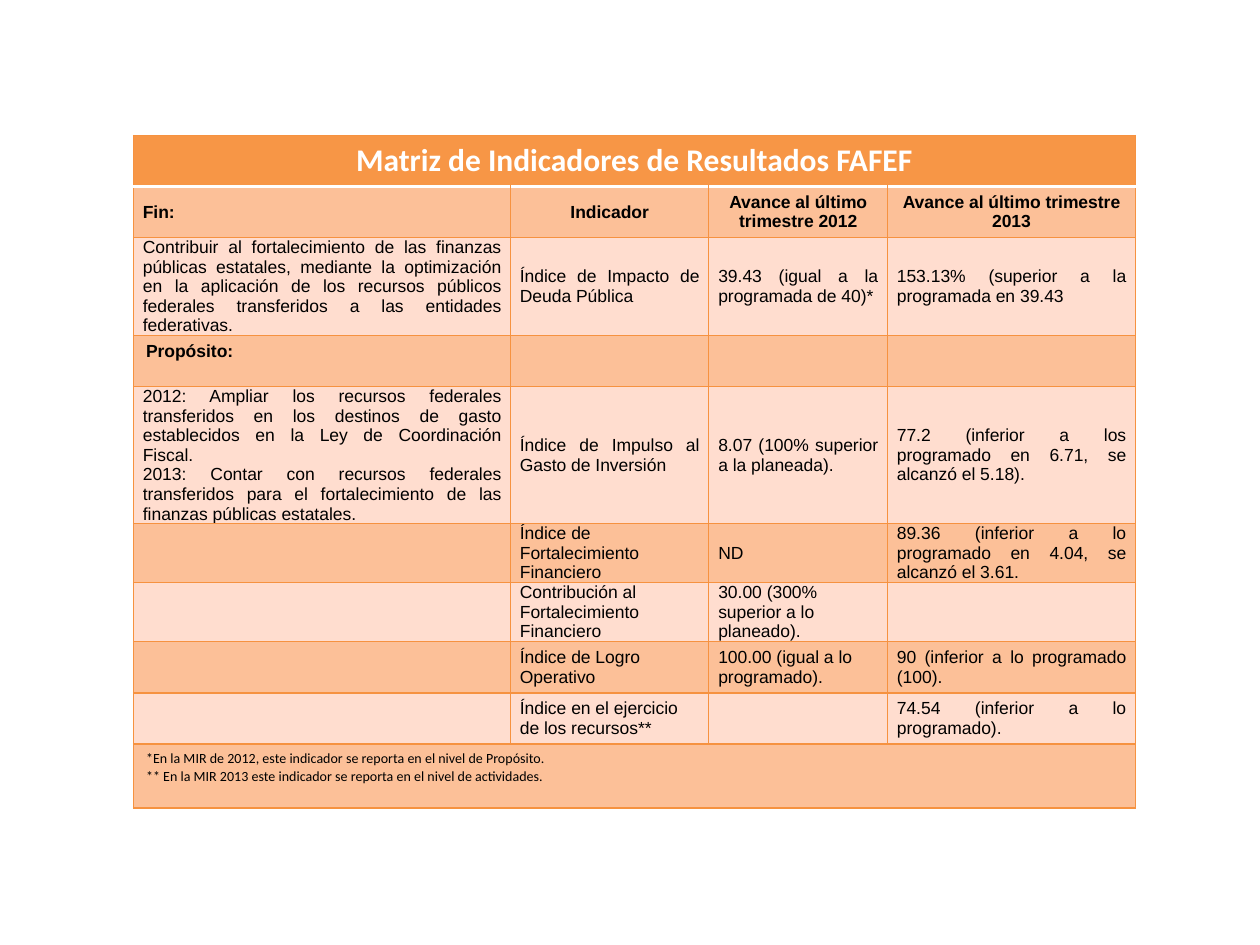
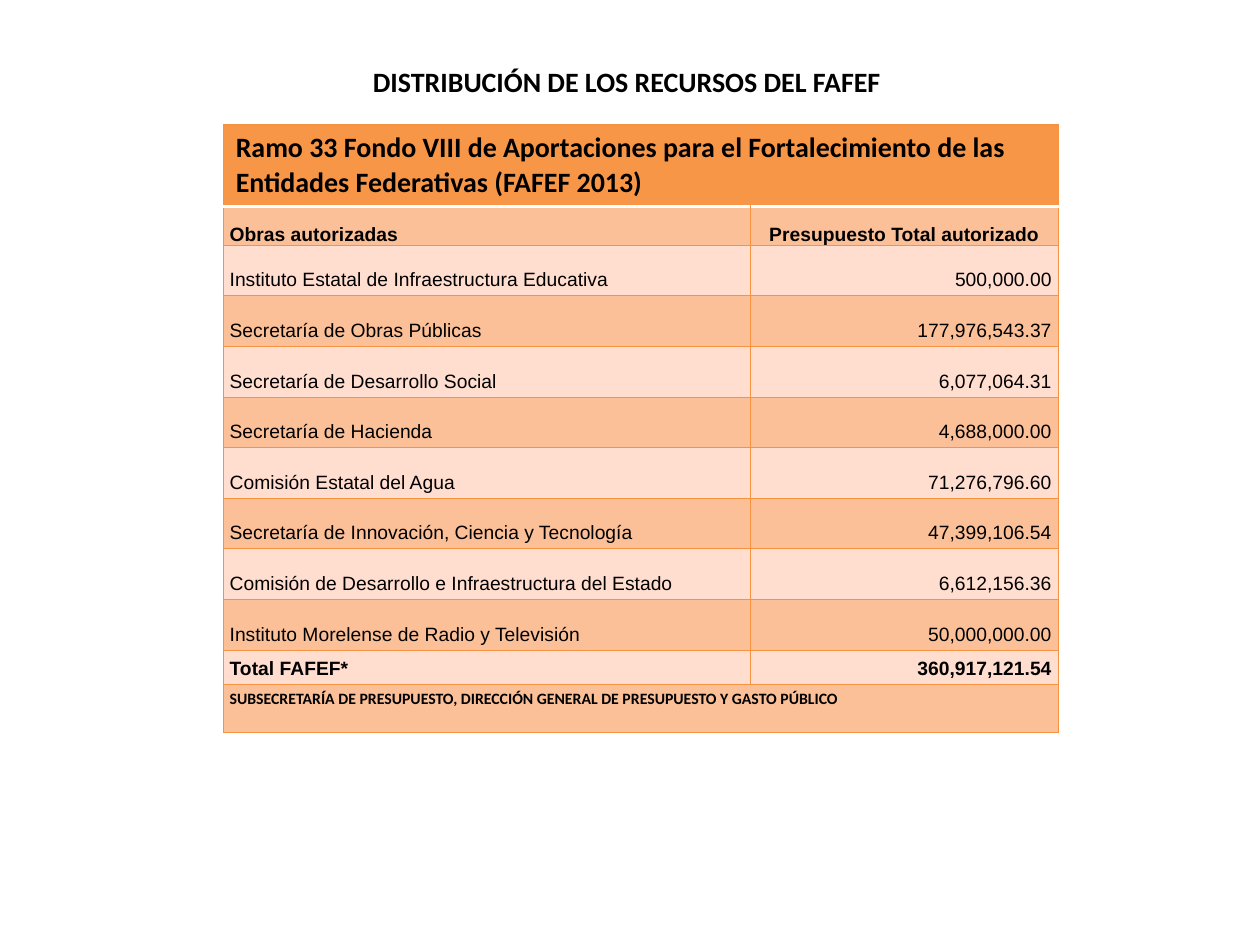
from pptx import Presentation
from pptx.util import Cm, Pt
from pptx.dml.color import RGBColor
from pptx.enum.text import PP_ALIGN, MSO_ANCHOR
from pptx.oxml import parse_xml
from pptx.oxml.ns import nsdecls

hues = {"head": "F79646", "band": "FCC098", "pale": "FFDDCF",
        "edge": "F69240", "white": "FFFFFF", "black": "000000"}
LEFT, MID, RIGHT, JUST = PP_ALIGN.LEFT, PP_ALIGN.CENTER, PP_ALIGN.RIGHT, PP_ALIGN.JUSTIFY
TOP, CORE, LOW = MSO_ANCHOR.TOP, MSO_ANCHOR.MIDDLE, MSO_ANCHOR.BOTTOM


def add_grid(slide, left, top, widths, heights):
    frame = slide.shapes.add_table(len(heights), len(widths), Cm(left), Cm(top),
                                   Cm(sum(widths)), Cm(sum(heights)))
    grid = frame.table
    grid.first_row = grid.horz_banding = False
    for col, width in zip(grid.columns, widths):
        col.width = Cm(width)
    for i, height in enumerate(heights):
        grid.rows[i].height = Cm(height)
        for cell in grid.rows[i].cells:
            props = cell._tc.get_or_add_tcPr()
            for side in "LRTB":
                seam = (i, side) in ((0, "B"), (1, "T"))
                tone = hues["white" if seam else "edge"]
                wide = Pt(2 if seam else 0.75)
                props.append(parse_xml(
                    f'<a:ln{side} {nsdecls("a")} w="{wide}"><a:solidFill>'
                    f'<a:srgbClr val="{tone}"/></a:solidFill></a:ln{side}>'))
            fill = "head" if i == 0 else "band" if i % 2 else "pale"
            cell.fill.solid()
            cell.fill.fore_color.rgb = RGBColor.from_string(hues[fill])
    for i in (0, len(heights) - 1):
        grid.cell(i, 0).merge(grid.cell(i, len(widths) - 1))
    return grid


def put_text(box, text, size, face="Arial", bold=False, align=LEFT, ink="black"):
    box.text_frame.text = text
    for para in box.text_frame.paragraphs:
        para.alignment = align
        for run in para.runs:
            font = run.font
            font.size, font.name, font.bold = Pt(size), face, bold
            font.color.rgb = RGBColor.from_string(hues[ink])


deck = Presentation()
deck.slide_width, deck.slide_height = Cm(25.4), Cm(19.05)

goals = [
    ["Fin:", "Indicador", "Avance al último trimestre 2012", "Avance al último trimestre 2013"],
    ["Contribuir al fortalecimiento de las finanzas públicas estatales, mediante la "
     "optimización en la aplicación de los recursos públicos federales transferidos a "
     "las entidades federativas.",
     "Índice de Impacto de Deuda Pública", "39.43 (igual a la programada de 40)*",
     "153.13% (superior a la programada en 39.43"],
    ["Propósito:", "", "", ""],
    ["2012: Ampliar los recursos federales transferidos en los destinos de gasto "
     "establecidos en la Ley de Coordinación Fiscal.\n"
     "2013: Contar con recursos federales transferidos para el fortalecimiento de las "
     "finanzas públicas estatales.",
     "Índice de Impulso al Gasto de Inversión", "8.07 (100% superior a la planeada).",
     "77.2 (inferior a los programado en 6.71, se alcanzó el 5.18)."],
    ["", "Índice de Fortalecimiento Financiero", "ND",
     "89.36 (inferior a lo programado en 4.04, se alcanzó el 3.61."],
    ["", "Contribución al Fortalecimiento Financiero", "30.00 (300% superior a lo planeado).", ""],
    ["", "Índice de Logro Operativo", "100.00 (igual a lo programado).",
     "90 (inferior a lo programado (100)."],
    ["", "Índice en el ejercicio de los recursos**", "", "74.54 (inferior a lo programado)."],
]
slide = deck.slides.add_slide(deck.slide_layouts[6])
grid = add_grid(slide, 2.69, 2.73, [7.6, 4, 3.6, 5],
                [1.03, 1.03, 1.98, 1.03, 2.74, 1.19, 1.19, 1.03, 1.03, 1.29])
head = grid.cell(0, 0)
put_text(head, "Matriz de Indicadores de Resultados FAFEF", 18, "Calibri", True, MID, "white")
head.vertical_anchor = CORE
for i, row in enumerate(goals, 1):
    for j, text in enumerate(row):
        if not text:
            continue
        cell = grid.cell(i, j)
        align = JUST
        if i == 1 and j:
            align = MID
        elif i == 3 or i > 4 and j < 3:
            align = LEFT
        put_text(cell, text, 10, bold=i in (1, 3), align=align)
        if i != 3:
            cell.vertical_anchor = CORE
            cell.margin_left = cell.margin_right = Cm(0.19)
            cell.margin_top = cell.margin_bottom = 0
put_text(grid.cell(9, 0),
         "*En la MIR de 2012, este indicador se reporta en el nivel de Propósito.\n"
         "** En la MIR 2013 este indicador se reporta en el nivel de actividades.", 8, "Calibri")

works = [
    ("Obras autorizadas", "Presupuesto Total autorizado"),
    ("Instituto Estatal de Infraestructura Educativa", "500,000.00"),
    ("Secretaría de Obras Públicas", "177,976,543.37"),
    ("Secretaría de Desarrollo Social", "6,077,064.31"),
    ("Secretaría de Hacienda", "4,688,000.00"),
    ("Comisión Estatal del Agua", "71,276,796.60"),
    ("Secretaría de Innovación, Ciencia y Tecnología", "47,399,106.54"),
    ("Comisión de Desarrollo e Infraestructura del Estado", "6,612,156.36"),
    ("Instituto Morelense de Radio y Televisión", "50,000,000.00"),
    ("Total FAFEF*", "360,917,121.54"),
    ("SUBSECRETARÍA DE PRESUPUESTO, DIRECCIÓN GENERAL DE PRESUPUESTO Y GASTO PÚBLICO",),
]
slide = deck.slides.add_slide(deck.slide_layouts[5])
title = slide.shapes.title
title.left, title.top, title.width, title.height = Cm(1.27), Cm(0.76), Cm(22.86), Cm(1.75)
title.text_frame.vertical_anchor = CORE
put_text(title, "DISTRIBUCIÓN DE LOS RECURSOS DEL FAFEF ", 16, "Calibri", True, MID)
grid = add_grid(slide, 4.5, 2.52, [10.63, 6.2], [1.63, 0.79] + [1.02] * 8 + [0.69, 0.97])
put_text(grid.cell(0, 0), "Ramo 33 Fondo VIII de Aportaciones para el Fortalecimiento de las "
         "Entidades Federativas (FAFEF 2013)", 16, "Calibri", True)
for i, row in enumerate(works, 1):
    last = i == len(works)
    for j, text in enumerate(row):
        cell = grid.cell(i, j)
        align = LEFT if j == 0 else MID if i == 1 else RIGHT
        put_text(cell, text, 9 if last else 11, "Calibri" if last else "Arial",
                 i == 1 or i > 9, align)
        cell.vertical_anchor = TOP if last else LOW
        cell.margin_left = cell.margin_right = Cm(0.13)
        cell.margin_top = cell.margin_bottom = Cm(0 if i == 1 else 0.1)

deck.save("out.pptx")
